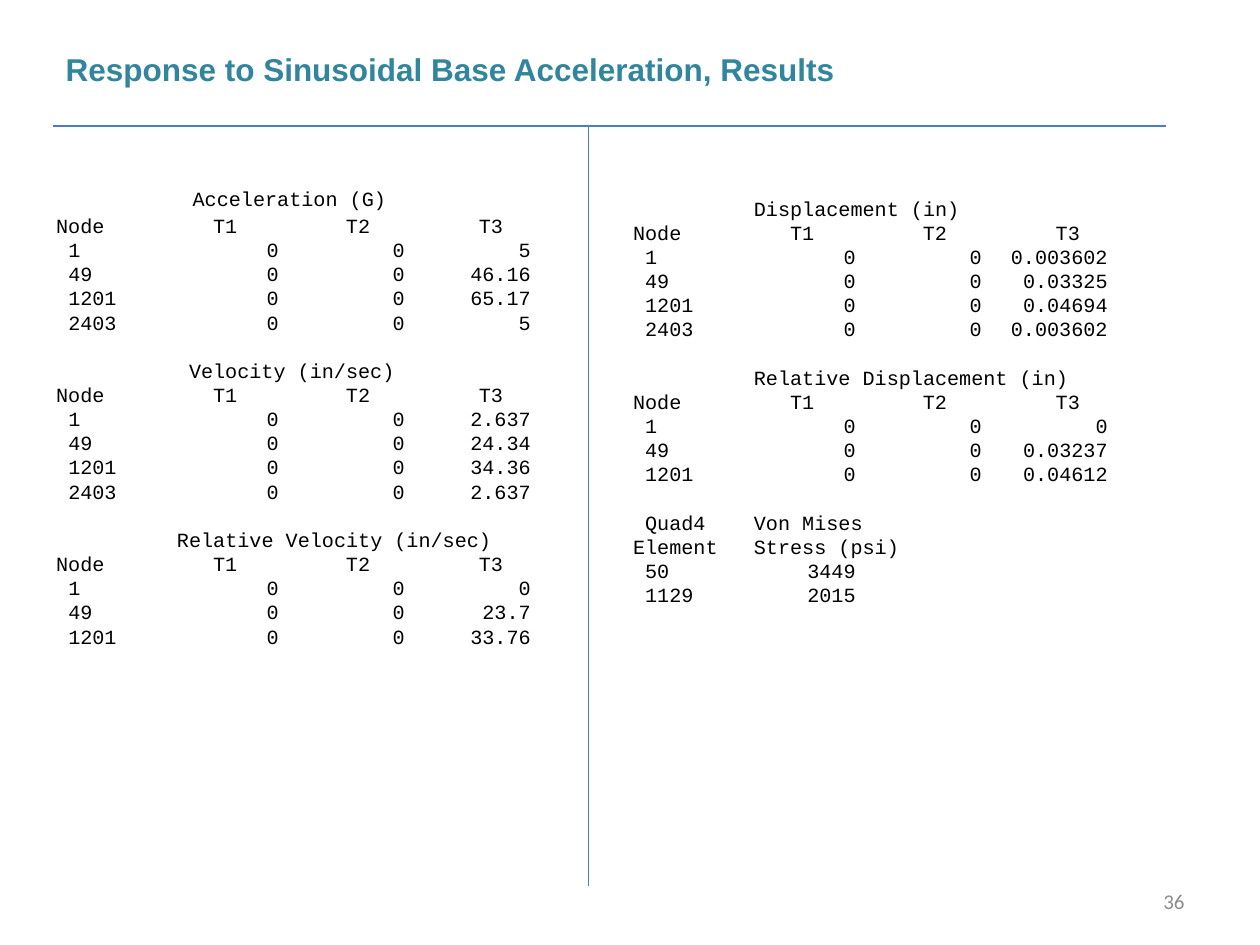
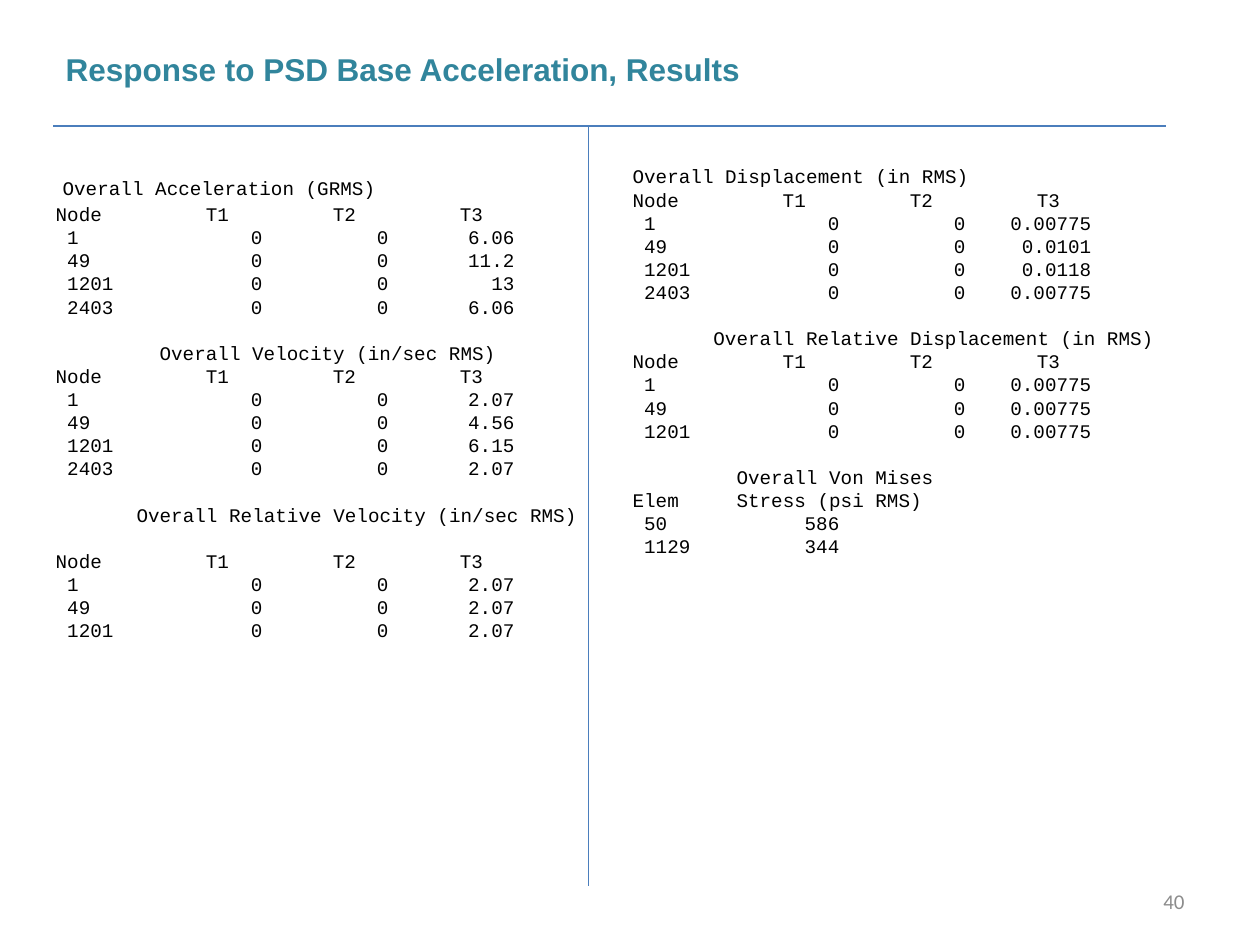
from dataclasses import dataclass
from typing import NamedTuple

from lxml import etree
from pptx import Presentation
from pptx.dml.color import RGBColor
from pptx.enum.shapes import MSO_CONNECTOR
from pptx.enum.text import MSO_ANCHOR, MSO_AUTO_SIZE, PP_ALIGN
from pptx.oxml.ns import qn
from pptx.util import Cm, Pt

STRAIGHT = MSO_CONNECTOR.STRAIGHT
TOP, MIDDLE = MSO_ANCHOR.TOP, MSO_ANCHOR.MIDDLE
LEFT, RIGHT = PP_ALIGN.LEFT, PP_ALIGN.RIGHT
NO_AUTOSIZE = MSO_AUTO_SIZE.NONE

TEAL, RULE_BLUE, BLACK, GREY = "31859C", "4B7EBC", "000000", "8C8C8C"
TITLE_FONT, DATA_FONT, NUMBER_FONT = "Arial", "Courier New", "Calibri"

TITLE_ONLY_LAYOUT = 5
NODES = ("1", "49", "1201", "2403")
AXES = ("T1", "T2", "T3")
TAB_CM = 2.54
LINE_FACTOR = 1.2
HEADING_GAP_PT = 1.5
INSET_CM = 0.14
RIGHT_PANEL_LEFT = 12.27


class Stop(NamedTuple):
    """A tab stop: a number of whole tabs plus a number of characters."""
    chars: float
    tabs: int = 0
    align: str = "l"


class Line(NamedTuple):
    cells: tuple[str, ...]
    stops: tuple[Stop, ...]
    lines_before: int = 0
    points_after: float = 0


@dataclass
class Panel:
    left: float
    top: float
    width: float
    height: float
    blocks: list[list[Line]]
    extra_inset: float = 0
    first_gap: float = 0


@dataclass
class ResultSlide:
    title: str
    number: str
    size: float
    panels: list[Panel]


def value_stops(digits: int, count: int) -> tuple[Stop, ...]:
    return tuple(Stop(digits, tab, "r") for tab in range(1, count + 1))


def node_block(heading: str, indent: float, digits: int, t3_values: str,
               header_lines_before: int = 0) -> list[Line]:
    """Heading, axis header and one line per node; only T3 is non-zero."""
    axis_stops = tuple(Stop(14 + 11 * i) for i in range(len(AXES)))
    row_stops = (Stop(2), *value_stops(digits, len(AXES)))
    return [
        Line((heading,), (Stop(indent),)),
        Line(("Node", *AXES), (Stop(1), *axis_stops), header_lines_before),
        *(Line((node, "0", "0", t3), row_stops)
          for node, t3 in zip(NODES, t3_values.split())),
    ]


def stress_block(headers: list[Line], digits: int,
                 stresses: dict[str, str]) -> list[Line]:
    stops = (Stop(2), *value_stops(digits, 1))
    return headers + [Line(item, stops) for item in stresses.items()]


def rgb(value: str) -> RGBColor:
    return RGBColor.from_string(value)


def add_run(paragraph, text: str, font: str, size: float, colour: str,
            bold: bool = False) -> None:
    run = paragraph.add_run()
    run.text = text
    run.font.name, run.font.size, run.font.bold = font, Pt(size), bold
    run.font.color.rgb = rgb(colour)


def add_rule(slide, x1: float, y1: float, x2: float, y2: float) -> None:
    rule = slide.shapes.add_connector(STRAIGHT, Cm(x1), Cm(y1), Cm(x2), Cm(y2))
    rule.line.color.rgb = rgb(RULE_BLUE)
    rule.line.width = Pt(0.75)
    etree.SubElement(rule._element.spPr, qn("a:effectLst"))


def set_tab_stops(paragraph, stops: tuple[Stop, ...], size: float) -> None:
    tab_list = etree.SubElement(paragraph._p.get_or_add_pPr(), qn("a:tabLst"))
    for stop in stops:
        position = Cm(stop.tabs * TAB_CM) + Pt(stop.chars * size * 0.6)
        etree.SubElement(tab_list, qn("a:tab"), pos=str(position),
                         algn=stop.align)


def add_panel(slide, panel: Panel, size: float) -> None:
    box = slide.shapes.add_textbox(Cm(panel.left), Cm(panel.top),
                                   Cm(panel.width), Cm(panel.height))
    frame = box.text_frame
    frame.word_wrap = True
    frame.margin_top = Cm(INSET_CM + panel.extra_inset)
    line_height = size * LINE_FACTOR
    for block_index, block in enumerate(panel.blocks):
        for line_index, line in enumerate(block):
            first = block_index == line_index == 0
            paragraph = frame.paragraphs[0] if first else frame.add_paragraph()
            starts_block = line_index == 0 and block_index > 0
            blank_lines = line.lines_before + starts_block
            paragraph.line_spacing = Pt(line_height)
            paragraph.space_before = Pt(blank_lines * line_height)
            paragraph.space_after = Pt(panel.first_gap if first else 0)
            set_tab_stops(paragraph, line.stops, size)
            add_run(paragraph, "".join(f"\t{cell}" for cell in line.cells),
                    DATA_FONT, size, BLACK)


def add_title(slide, text: str) -> None:
    title = slide.shapes.title
    title.left, title.top = Cm(1.07), Cm(0.89)
    title.width, title.height = Cm(16.51), Cm(1.02)
    frame = title.text_frame
    frame.auto_size = NO_AUTOSIZE
    frame.word_wrap = True
    frame.vertical_anchor = TOP
    paragraph = frame.paragraphs[0]
    paragraph.alignment = LEFT
    paragraph.space_before = paragraph.space_after = Pt(2)
    add_run(paragraph, text, TITLE_FONT, 18, TEAL, bold=True)


def add_page_number(slide, number: str) -> None:
    box = slide.shapes.add_textbox(Cm(18.21), Cm(17.65), Cm(5.92), Cm(1.02))
    frame = box.text_frame
    frame.word_wrap = True
    frame.vertical_anchor = MIDDLE
    frame.paragraphs[0].alignment = RIGHT
    add_run(frame.paragraphs[0], number, NUMBER_FONT, 12, GREY)


def add_result_slide(deck, content: ResultSlide) -> None:
    slide = deck.slides.add_slide(deck.slide_layouts[TITLE_ONLY_LAYOUT])
    add_title(slide, content.title)
    add_page_number(slide, content.number)
    add_rule(slide, 1.07, 2.54, 23.5, 2.54)
    add_rule(slide, 11.86, 2.54, 11.86, 17.86)
    for panel in content.panels:
        add_panel(slide, panel, content.size)


SINUSOIDAL = ResultSlide(
    "Response to Sinusoidal Base Acceleration, Results", "36", 11.5, [
        Panel(0.64, 3.38, 10.8, 9.88, [
            node_block("Acceleration (G)", 12.3, 9, "5 46.16 65.17 5"),
            node_block("Velocity (in/sec)", 12, 9, "2.637 24.34 34.36 2.637"),
            node_block("Relative Velocity (in/sec)", 11, 9, "0 23.7 33.76"),
        ], extra_inset=0.24, first_gap=HEADING_GAP_PT),
        Panel(RIGHT_PANEL_LEFT, 3.81, 12.27, 8.61, [
            node_block("Displacement (in)", 11, 9,
                       "0.003602 0.03325 0.04694 0.003602"),
            node_block("Relative Displacement (in)", 11, 9,
                       "0 0.03237 0.04612"),
            stress_block([
                Line(("Quad4", "Von Mises"), (Stop(2), Stop(11))),
                Line(("Element", "Stress (psi)"), (Stop(1), Stop(11))),
            ], 9, {"50": "3449", "1129": "2015"}),
        ]),
    ])

PSD = ResultSlide(
    "Response to PSD Base Acceleration, Results", "40", 11, [
        Panel(0.64, 3.18, 11.63, 9.96, [
            node_block("Overall Acceleration (GRMS)", 1.6, 8,
                       "6.06 11.2 13 6.06"),
            node_block("Overall Velocity (in/sec RMS)", 10, 8,
                       "2.07 4.56 6.15 2.07"),
            node_block("Overall Relative Velocity (in/sec RMS)", 8, 8,
                       "2.07 2.07 2.07", header_lines_before=1),
        ], extra_inset=0.24, first_gap=HEADING_GAP_PT),
        Panel(RIGHT_PANEL_LEFT, 3.18, 12.27, 8.56, [
            node_block("Overall Displacement (in RMS)", 1, 8,
                       "0.00775 0.0101 0.0118 0.00775"),
            node_block("Overall Relative Displacement (in RMS)", 8, 8,
                       "0.00775 0.00775 0.00775"),
            stress_block([
                Line(("Overall Von Mises",), (Stop(10),)),
                Line(("Elem", "Stress (psi RMS)"), (Stop(1), Stop(10))),
            ], 8, {"50": "586", "1129": "344"}),
        ]),
    ])


def main() -> None:
    deck = Presentation()
    deck.slide_width, deck.slide_height = Cm(25.4), Cm(19.05)
    for content in (SINUSOIDAL, PSD):
        add_result_slide(deck, content)
    deck.save("out.pptx")


if __name__ == "__main__":
    main()
